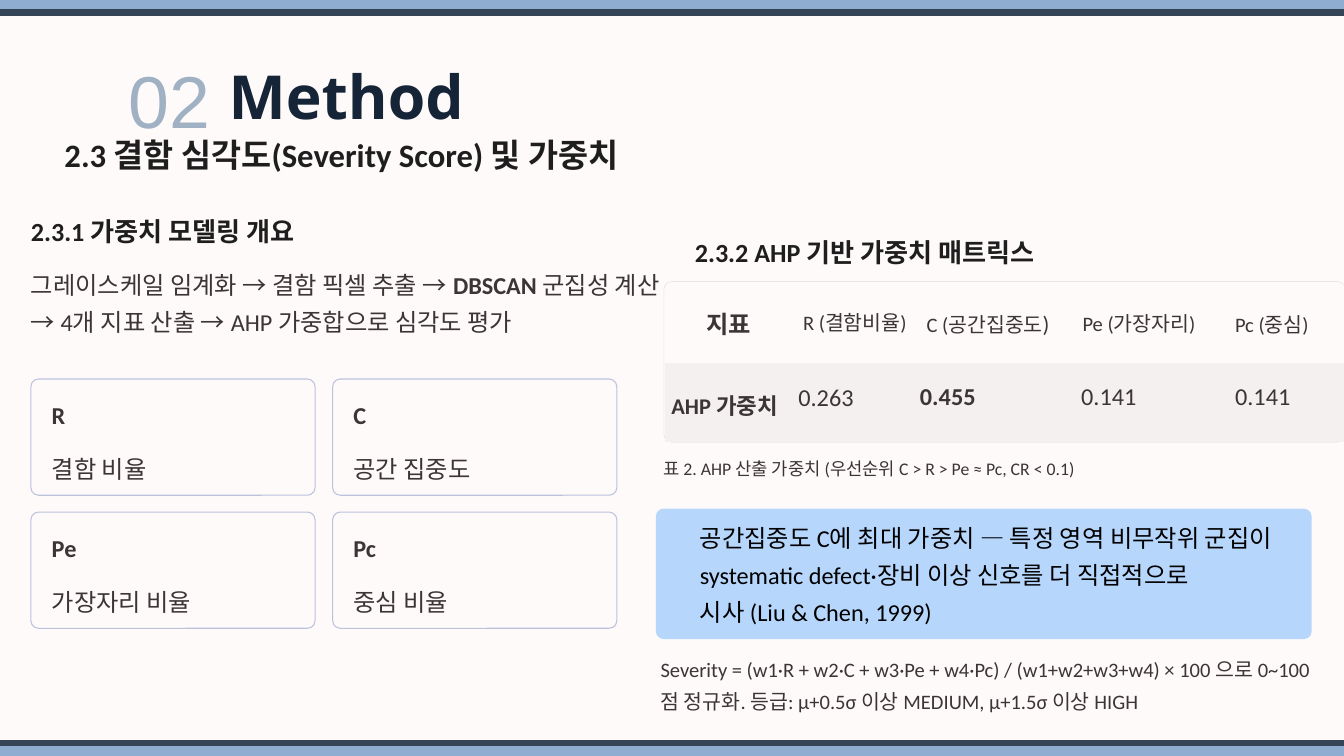
import pptx
import pptx.util
import pptx.dml.color
import pptx.enum.shapes
import pptx.enum.text
import pptx.oxml.ns
from lxml import etree

Inches, Pt = pptx.util.Inches, pptx.util.Pt
SHAPE = pptx.enum.shapes.MSO_SHAPE
ALIGN = pptx.enum.text.PP_ALIGN
ANCHOR = pptx.enum.text.MSO_ANCHOR
qn = pptx.oxml.ns.qn

COLORS = {
    "paper": "FFFAFA", "heading": "1F1E1E", "body": "3B3535", "black": "000000",
    "card_line": "BBC2DC", "value_row": "F5F0F0", "callout": "B6D6FC",
    "band": "8FADD1", "rule": "354457", "title": "152437", "number": "A0B1C4",
}

# Content: a run is (text, size, bold)
HEADINGS = [  # box, runs
    ((0.96, 1.98, 14.37, 0.9), [("2.3 결함 심각도(Severity Score) 및 가중치", 35, True)]),
    ((0.46, 3.19, 4.67, 0.45), [("2.3.1 가중치 모델링 개요", 28, True)]),
    ((10.34, 3.5, 5.97, 0.45), [("2.3.2 AHP 기반 가중치 매트릭스", 28, True)]),
]
BODY = [
    ((0.46, 3.9, 9.42, 0.84), [
        ("그레이스케일 임계화 → 결함 픽셀 추출 → ", 26, False),
        ("DBSCAN ", 26, True),
        ("군집성 계산 → 4개 지표 산출 → AHP 가중합으로 심각도 평가", 26, False)]),
    ((9.87, 6.72, 9.66, 0.42), [
        ("표 2. AHP 산출 가중치 (우선순위 C > R > Pe ≈ Pc, CR < 0.1)", 19, False)]),
    ((9.83, 9.68, 9.69, 0.84), [
        ("Severity = (w1·R + w2·C + w3·Pe + w4·Pc) / (w1+w2+w3+w4) × 100 으로 "
         "0~100점 정규화. 등급: μ+0.5σ 이상 MEDIUM, μ+1.5σ 이상 HIGH", 22, False)]),
]
CARDS = [("R", "결함 비율"), ("C", "공간 집중도"), ("Pe", "가장자리 비율"), ("Pc", "중심 비율")]
CALLOUT = [
    ("공간집중도 C에 최대 가중치 — 특정 영역 비무작위 군집이 "
     "systematic defect·장비 이상 신호를 더 직접적으로 ", 26, False),
    ("\v", 26, False),
    ("시사 (Liu & Chen, 1999)", 26, False),
]
COLUMN_EDGES = [9.89, 11.8, 13.69, 16.05, 18.3, 20]
WEIGHTS = [  # per cell: runs, left inset, top inset
    [([("지표", 26, True)], 0.62, 0.18),
     ([("R (결함비율)", 22, False)], 0.15, 0.22),
     ([("C (공간집중도", 22, False), (")", 24, False)], 0.1, 0.25),
     ([("Pe (가장자리)", 22, False)], 0.06, 0.24),
     ([("Pc (중심)", 22, False)], 0.08, 0.25)],
    [([("AHP 가중치", 24, True)], 0.1, 0.25),
     ([("0.263", 26, False)], 0.08, 0.18),
     ([("0.455", 26, True)], 0, 0.16),
     ([("0.141", 26, False)], 0.04, 0.16),
     ([("0.141", 26, False)], 0.08, 0.16)],
]
NO_STYLE = "{2D5ABB26-0587-4C30-8999-92F81FD0307C}"


def rgb(name):
    return pptx.dml.color.RGBColor.from_string(COLORS[name])


def write(tf, runs, color, spacing=1.28, font="Calibri", align=ALIGN.LEFT):
    p = tf.paragraphs[0]
    p.alignment, p.line_spacing = align, spacing
    for text, size, bold in runs:
        if text == "\v":
            p.add_line_break()
            continue
        r = p.add_run()
        r.text = text
        r.font.name, r.font.size, r.font.bold = font, Pt(size), bold
        r.font.color.rgb = rgb(color)


def set_insets(target, left=0, top=0):
    target.margin_left, target.margin_top = Inches(left), Inches(top)
    target.margin_right = target.margin_bottom = 0


def add_text(s, box, runs, color, **style):
    tf = s.shapes.add_textbox(*map(Inches, box)).text_frame
    tf.word_wrap = True
    set_insets(tf)
    write(tf, runs, color, **style)


def add_box(s, box, kind=SHAPE.RECTANGLE, fill=None, line=None, width=0.75, corner=None):
    sp = s.shapes.add_shape(kind, *map(Inches, box))
    sp.shadow.inherit = False
    if corner is not None:
        sp.adjustments[0] = corner
    if fill:
        sp.fill.solid()
        sp.fill.fore_color.rgb = rgb(fill)
    else:
        sp.fill.background()
    if line:
        sp.line.color.rgb = rgb(line)
        sp.line.width = Pt(width)
    else:
        sp.line.fill.background()
    return sp


def add_cards(s):
    for i, (symbol, meaning) in enumerate(CARDS):
        row, col = divmod(i, 2)
        x, y = 0.46 + col * 4.49, 5.64 + row * 1.98
        add_box(s, (x, y, 4.23, 1.73), SHAPE.ROUNDED_RECTANGLE, "paper", "card_line", 1.12, 0.066)
        add_text(s, (x + 0.31, y + 0.3, 3.59, 0.45), [(symbol, 26, True)], "body", spacing=1.04)
        add_text(s, (x + 0.31, y + 1, 3.62, 0.42), [(meaning, 26, False)], "body")


def add_weights(s):
    # Faint rounded frame behind the table
    frame = add_box(s, (9.88, 4.19, 10.14, 2.39), SHAPE.ROUNDED_RECTANGLE, line="black", corner=0.049)
    stroke = frame.line.color._xFill.find(qn("a:srgbClr"))
    etree.SubElement(stroke, qn("a:alpha"), val="8000")

    left, right = COLUMN_EDGES[0], COLUMN_EDGES[-1]
    table = s.shapes.add_table(2, 5, *map(Inches, (left, 4.22, right - left, 2.36))).table
    table.first_row = table.horz_banding = False
    table._tbl.tblPr.find(qn("a:tableStyleId")).text = NO_STYLE
    for col, start, end in zip(table.columns, COLUMN_EDGES, COLUMN_EDGES[1:]):
        col.width = Inches(end - start)
    for r, row in enumerate(WEIGHTS):
        for c, (runs, inset, top) in enumerate(row):
            cell = table.cell(r, c)
            set_insets(cell, inset, top)
            cell.vertical_anchor = ANCHOR.TOP
            if r == 0:
                cell.fill.background()
            else:
                cell.fill.solid()
                cell.fill.fore_color.rgb = rgb("value_row")
            write(cell.text_frame, runs, "body")


def add_edge(s, band_top, rule_y):
    add_box(s, (-0.21, band_top, 20.35, 0.15), fill="band")
    rule = s.shapes.add_connector(pptx.enum.shapes.MSO_CONNECTOR.STRAIGHT, Inches(-0.21),
                                  Inches(rule_y), Inches(20.4), Inches(rule_y))
    rule.line.color.rgb = rgb("rule")
    rule.line.width = Pt(7)
    etree.SubElement(rule._element.spPr, qn("a:effectLst"))


def main():
    prs = pptx.Presentation()
    prs.slide_width, prs.slide_height = Inches(20), Inches(11.25)
    s = prs.slides.add_slide(prs.slide_layouts[6])
    s.background.fill.solid()
    s.background.fill.fore_color.rgb = rgb("paper")

    # Headings and running text
    for box, runs in HEADINGS:
        add_text(s, box, runs, "heading", spacing=1.04)
    for box, runs in BODY:
        add_text(s, box, runs, "body")

    add_cards(s)
    add_weights(s)

    # Key finding
    callout = add_box(s, (9.76, 7.57, 9.76, 1.94), SHAPE.ROUNDED_RECTANGLE, "callout", corner=0.059)
    tf = callout.text_frame
    tf.word_wrap = True
    tf.vertical_anchor = ANCHOR.TOP
    set_insets(tf, 0.62, 0.06)
    write(tf, CALLOUT, "black")

    # Bottom and top edges
    add_edge(s, 11.1, 11.06)
    add_edge(s, 0, 0.19)

    # Section title
    add_text(s, (3.17, 0.45, 15.17, 1.53), [(" Method", 65, True)], "title",
             spacing=1.4, font="Open Sans")
    add_text(s, (1.72, 0.29, 1.61, 1.54), [("02", 78.7, False)], "number",
             spacing=1.4, font="Arial", align=ALIGN.CENTER)

    prs.save("out.pptx")


if __name__ == "__main__":
    main()
